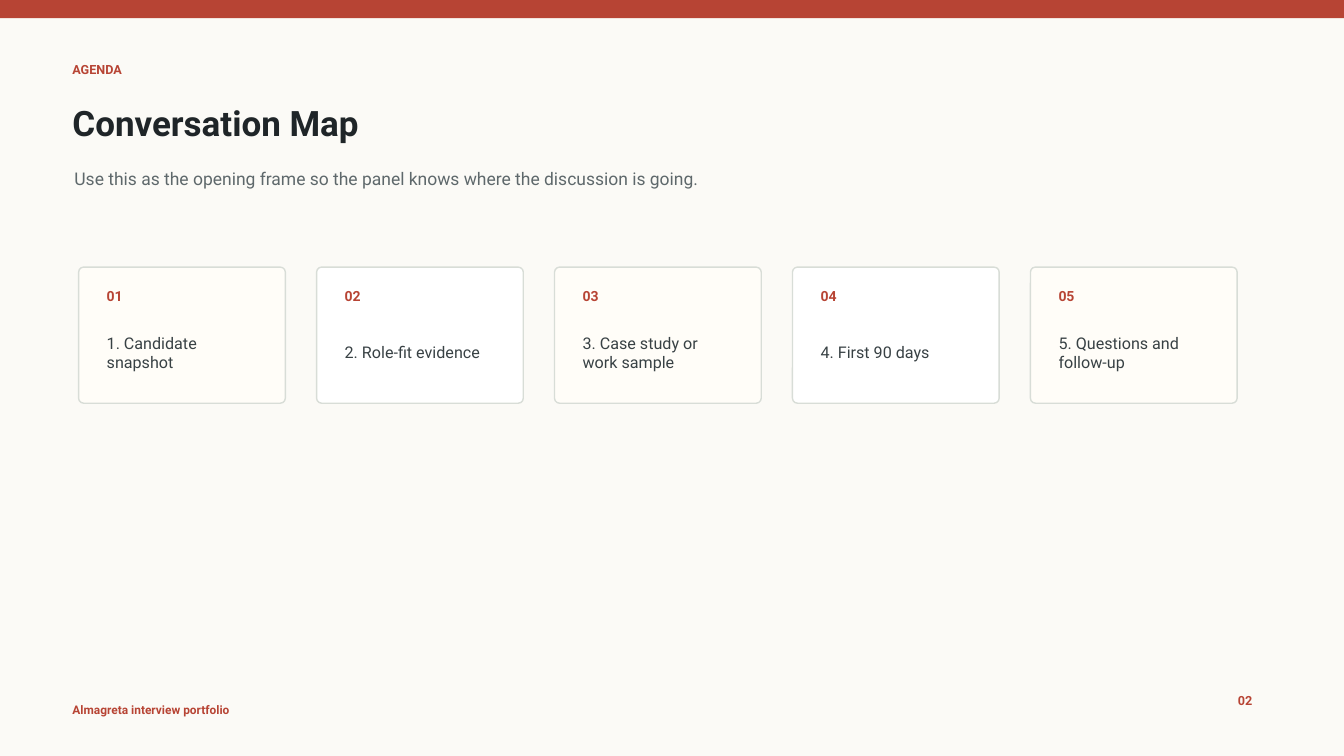
from pptx import Presentation, util as u
from pptx.dml.color import RGBColor
from pptx.enum import shapes, text

SLIDE_W, SLIDE_H = 13.33, 7.5
MARGIN = 0.62
ACCENT = "B74434"
FONT = "Roboto"
LABEL = dict(size=9, bold=True, color=ACCENT)
FOOTER = dict(size=8.5, bold=True, color=ACCENT)
TITLE = dict(size=25, bold=True, color="1F2528")
SUBTITLE = dict(size=12.5, bold=False, color="5E686B")
NUMBER = dict(size=10, bold=True, color=ACCENT)
TOPIC = dict(size=11.5, bold=False, color="384144")
CARD_FILLS = ("FFFDF8", "FFFFFF")
TOPICS = (
    "1. Candidate snapshot",
    "2. Role-fit evidence",
    "3. Case study or work sample",
    "4. First 90 days",
    "5. Questions and follow-up",
)


def paint(color_format, hex_color):
    color_format.rgb = RGBColor.from_string(hex_color)


def add_text(slide, box, wording, style):
    frame = slide.shapes.add_textbox(*map(u.Inches, box)).text_frame
    frame.word_wrap = True
    frame.vertical_anchor = text.MSO_ANCHOR.MIDDLE
    run = frame.paragraphs[0].add_run()
    run.text = wording
    font_values = dict(name=FONT, size=u.Pt(style["size"]), bold=style["bold"])
    for attribute, value in font_values.items():
        setattr(run.font, attribute, value)
    paint(run.font.color, style["color"])


def add_panel(slide, kind, box, fill, outline=None):
    panel = slide.shapes.add_shape(kind, *map(u.Inches, box))
    panel.shadow.inherit = False
    panel.fill.solid()
    paint(panel.fill.fore_color, fill)
    if outline:
        paint(panel.line.color, outline)
        panel.line.width = u.Pt(1)
    else:
        panel.line.fill.background()
    return panel


def add_header(slide, box):
    left, top, width, _ = box
    add_text(slide, (left, top, 4.8, 0.22), "AGENDA", LABEL)
    add_text(slide, (left, top + 0.36, width - 1, 0.55), "Conversation Map", TITLE)
    add_text(slide, (left + 0.02, top + 0.98, width, 0.42),
             "Use this as the opening frame so the panel knows where the discussion is going.",
             SUBTITLE)


def add_card(slide, box, index, topic):
    left, top, width, height = box
    card = add_panel(slide, shapes.MSO_SHAPE.ROUNDED_RECTANGLE, box,
                     CARD_FILLS[index % 2], "D8DDD7")
    card.adjustments[0] = 0.037
    pad = 0.18
    inner = width - 2 * pad
    add_text(slide, (left + pad, top + 0.16, inner, 0.25), f"{index + 1:02}", NUMBER)
    add_text(slide, (left + pad, top + 0.48, inner, height - 0.62), topic, TOPIC)


def add_agenda(slide, box, gap=0.31):
    """Share the box among equal cards, one per topic."""
    left, top, width, height = box
    card_width = (width - gap * (len(TOPICS) - 1)) / len(TOPICS)
    for index, topic in enumerate(TOPICS):
        card_left = left + index * (card_width + gap)
        add_card(slide, (card_left, top, card_width, height), index, topic)


def add_footer(slide, box):
    left, top, width, _ = box
    add_text(slide, (left, top + 0.12, 3, 0.2), "Almagreta interview portfolio", FOOTER)
    add_text(slide, (left + width - 0.5, top, 0.5, 0.25), "02", LABEL)


def main():
    deck = Presentation()
    deck.slide_width, deck.slide_height = u.Inches(SLIDE_W), u.Inches(SLIDE_H)
    slide = deck.slides.add_slide(deck.slide_layouts[6])
    slide.background.fill.solid()
    paint(slide.background.fill.fore_color, "FBFAF6")

    add_panel(slide, shapes.MSO_SHAPE.RECTANGLE, (0, 0, SLIDE_W, 0.18), ACCENT)
    add_footer(slide, (MARGIN, 6.82, 12.06, 0.32))
    add_header(slide, (MARGIN, 0.58, 10.8, 1.4))
    add_agenda(slide, (0.78, 2.65, 11.49, 1.35))
    deck.save("out.pptx")


if __name__ == "__main__":
    main()
